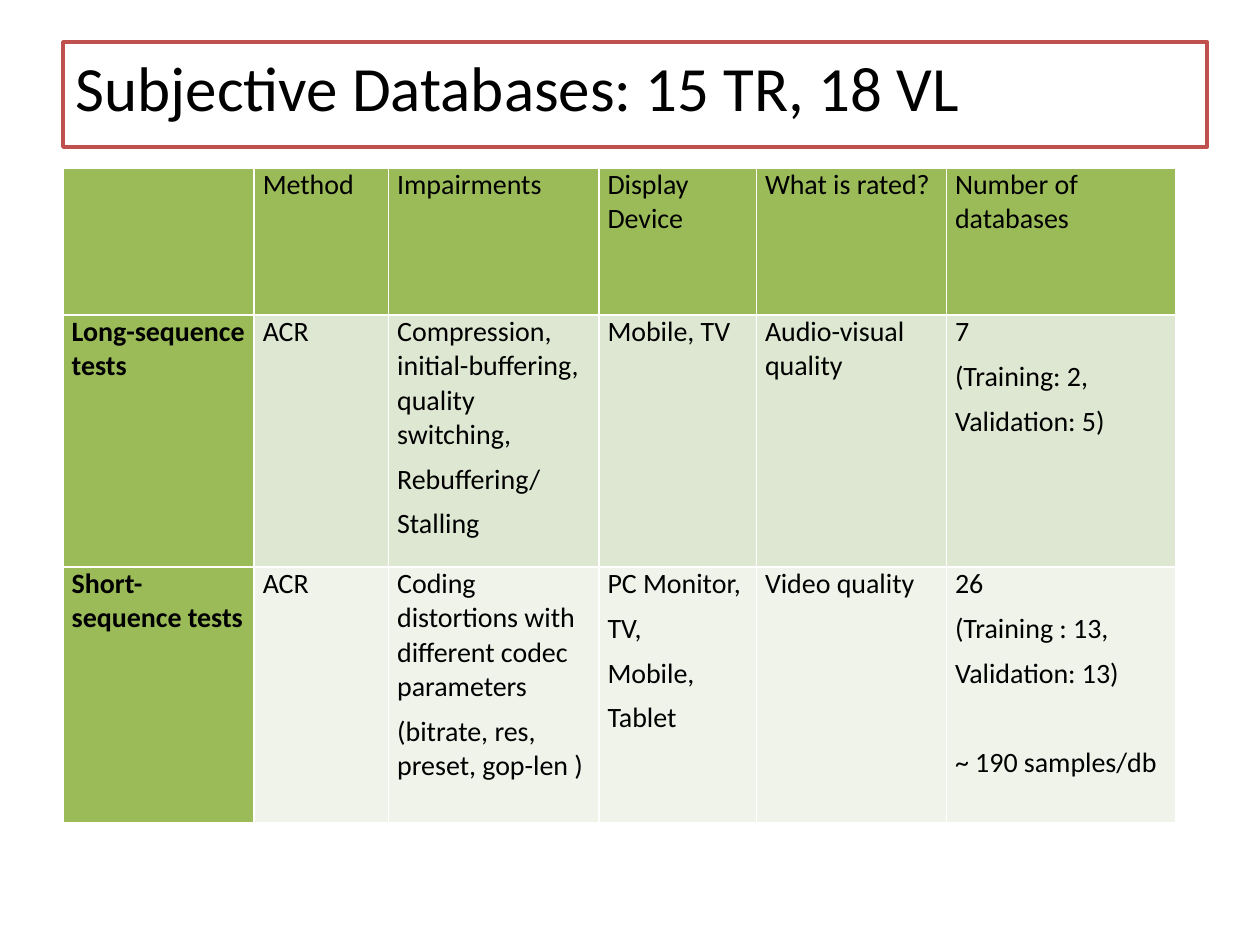
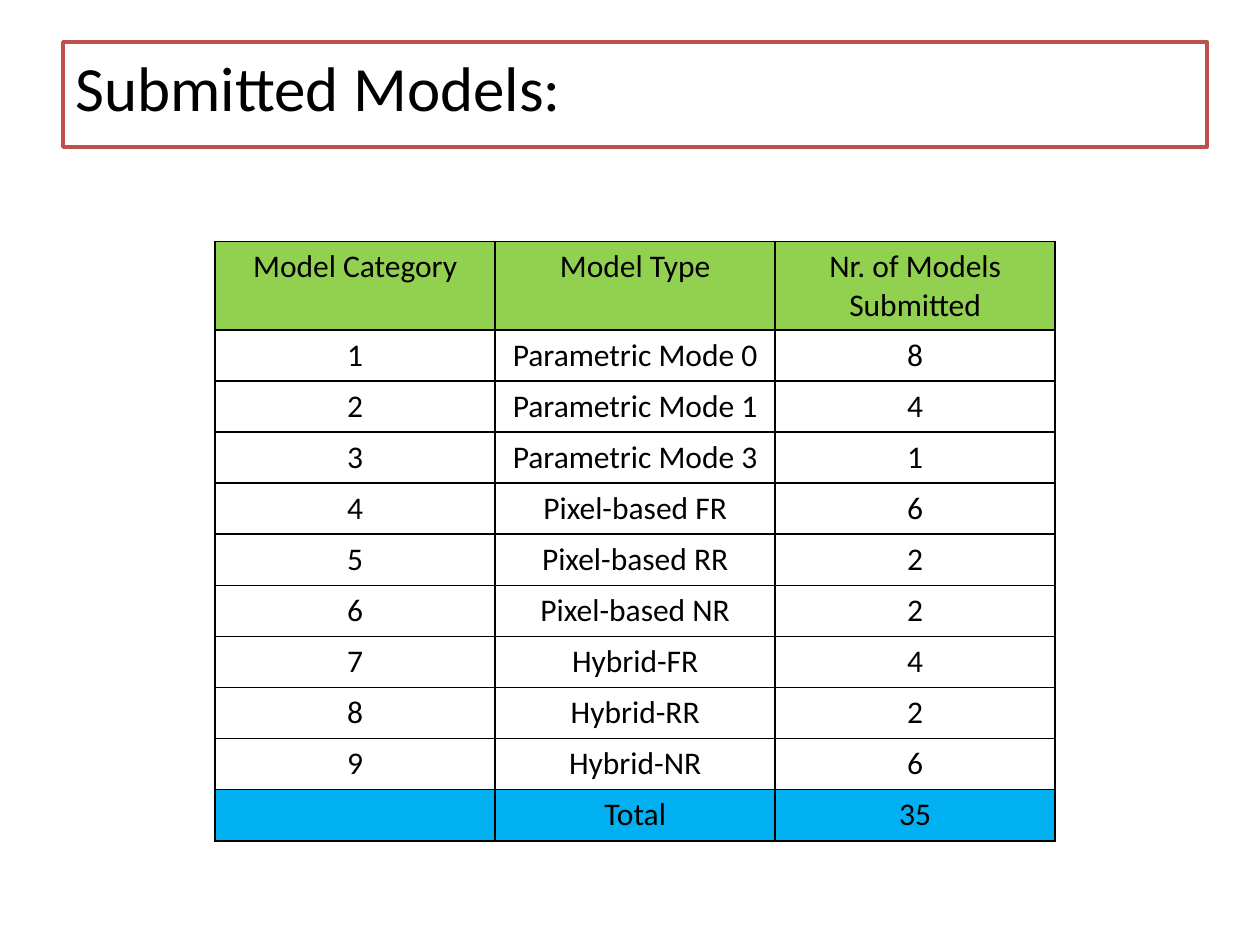
from dataclasses import dataclass

from lxml import etree
from pptx import Presentation
from pptx import util as u
from pptx.dml.color import RGBColor
from pptx.enum import text
from pptx.oxml import ns

FONT = "Calibri"
BLACK, WHITE, RED = "000000", "FFFFFF", "C0504D"
OLIVE, SAGE, MIST = "9BBB59", "DEE7D1", "EFF3EA"
LIME, SKY = "92D050", "00B0F0"
TITLE_ONLY = 5
PARAGRAPH_GAP = 6
NOTE_GAP = 31.5


@dataclass(frozen=True)
class Para:
    words: str
    before: float = 0


@dataclass(frozen=True)
class Cell:
    paras: tuple[Para, ...]
    fill: str | None
    bold: bool = False


@dataclass(frozen=True)
class Grid:
    left: float
    top: float
    cols: list[float]
    rows: list[float]
    cells: list[list[Cell]]
    size: float
    border: str
    align: text.PP_ALIGN
    margin_x: float
    margin_y: float


def rgb(value: str) -> RGBColor:
    return RGBColor.from_string(value)


def add_run(p, words: str, size: float, bold: bool = False) -> None:
    r = p.add_run()
    r.text = words
    r.font.name = FONT
    r.font.size = u.Pt(size)
    r.font.bold = bold
    r.font.color.rgb = rgb(BLACK)


def set_borders(cell, color: str) -> None:
    tc_pr = cell._tc.get_or_add_tcPr()
    for i, side in enumerate(("lnL", "lnR", "lnT", "lnB")):
        ln = etree.Element(ns.qn(f"a:{side}"), w=str(u.Pt(1)))
        fill = etree.SubElement(ln, ns.qn("a:solidFill"))
        etree.SubElement(fill, ns.qn("a:srgbClr"), val=color)
        tc_pr.insert(i, ln)


def add_titled_slide(prs, words: str):
    s = prs.slides.add_slide(prs.slide_layouts[TITLE_ONLY])
    sp = s.shapes.title
    sp.left, sp.top, sp.width, sp.height = map(u.Pt, (36, 24, 653.8, 51.1))
    sp.fill.solid()
    sp.fill.fore_color.rgb = rgb(WHITE)
    sp.line.color.rgb = rgb(RED)
    sp.line.width = u.Pt(2)
    tf = sp.text_frame
    tf.word_wrap = True
    tf.auto_size = text.MSO_AUTO_SIZE.SHAPE_TO_FIT_TEXT
    tf.vertical_anchor = text.MSO_ANCHOR.TOP
    p = tf.paragraphs[0]
    p.alignment = text.PP_ALIGN.LEFT
    add_run(p, words, 36)
    return s


def fill_cell(cell, content: Cell, grid: Grid) -> None:
    cell.margin_left = cell.margin_right = u.Pt(grid.margin_x)
    cell.margin_top = cell.margin_bottom = u.Pt(grid.margin_y)
    if content.fill:
        cell.fill.solid()
        cell.fill.fore_color.rgb = rgb(content.fill)
    else:
        cell.fill.background()
    set_borders(cell, grid.border)
    tf = cell.text_frame
    for i, para in enumerate(content.paras):
        p = tf.add_paragraph() if i else tf.paragraphs[0]
        p.alignment = grid.align
        p.space_before = u.Pt(para.before)
        add_run(p, para.words, grid.size, content.bold)


def add_grid(s, grid: Grid) -> None:
    box = (grid.left, grid.top, sum(grid.cols), sum(grid.rows))
    table = s.shapes.add_table(len(grid.rows), len(grid.cols), *map(u.Pt, box)).table
    table.first_row = table.horz_banding = False
    for column, width in zip(table.columns, grid.cols):
        column.width = u.Pt(width)
    for row, height, contents in zip(table.rows, grid.rows, grid.cells):
        row.height = u.Pt(height)
        for cell, content in zip(row.cells, contents):
            fill_cell(cell, content, grid)


def spaced(*lines: str) -> tuple[Para, ...]:
    return tuple(Para(line, PARAGRAPH_GAP) for line in lines)


def test_row(name: str, fill: str, *columns: tuple[Para, ...]) -> list[Cell]:
    return [Cell(spaced(name), OLIVE, True)] + [Cell(c, fill) for c in columns]


def model_row(fill: str | None, *values: str) -> list[Cell]:
    return [Cell((Para(v),) if v else (), fill) for v in values]


def database_grid() -> Grid:
    headings = ("Method", "Impairments", "Display Device", "What is rated?",
                "Number of databases")
    cells = [
        [Cell((), OLIVE)] + [Cell(spaced(h), OLIVE) for h in headings],
        test_row(
            "Long-sequence tests", SAGE,
            spaced("ACR"),
            spaced("Compression, initial-buffering, quality switching,",
                   "Rebuffering/", "Stalling"),
            spaced("Mobile, TV"),
            spaced("Audio-visual quality"),
            spaced("7", "(Training: 2,", "Validation: 5)"),
        ),
        test_row(
            "Short-sequence tests", MIST,
            spaced("ACR"),
            spaced("Coding distortions with different codec parameters",
                   "(bitrate, res, preset, gop-len )"),
            spaced("PC Monitor,", "TV,", "Mobile,", "Tablet"),
            spaced("Video quality"),
            spaced("26", "(Training : 13,", "Validation: 13)")
            + (Para("~ 190 samples/db", NOTE_GAP),),
        ),
    ]
    return Grid(36, 96, [109.2, 76.8, 120.2, 90, 108.6, 131], [84, 144, 146.2],
                cells, 16, WHITE, text.PP_ALIGN.LEFT, 5, 0)


def model_grid() -> Grid:
    models = [
        ("Parametric Mode 0", 8), ("Parametric Mode 1", 4), ("Parametric Mode 3", 1),
        ("Pixel-based FR", 6), ("Pixel-based RR", 2), ("Pixel-based NR", 2),
        ("Hybrid-FR", 4), ("Hybrid-RR", 2), ("Hybrid-NR", 6),
    ]
    total = sum(count for _, count in models)
    cells = [
        model_row(LIME, "Model Category", "Model Type", "Nr. of Models Submitted"),
        *(model_row(None, str(i), kind, str(count))
          for i, (kind, count) in enumerate(models, 1)),
        model_row(SKY, "", "Total", str(total)),
    ]
    return Grid(123, 138, [160] * 3, [50.5] + [29.2] * (len(cells) - 1),
                cells, 18, BLACK, text.PP_ALIGN.CENTER, 7.2, 3.6)


def main() -> None:
    prs = Presentation()
    prs.slide_width, prs.slide_height = u.Pt(720), u.Pt(540)
    add_grid(add_titled_slide(prs, "Subjective Databases: 15 TR, 18 VL"), database_grid())
    add_grid(add_titled_slide(prs, "Submitted Models:"), model_grid())
    prs.save("out.pptx")


if __name__ == "__main__":
    main()
